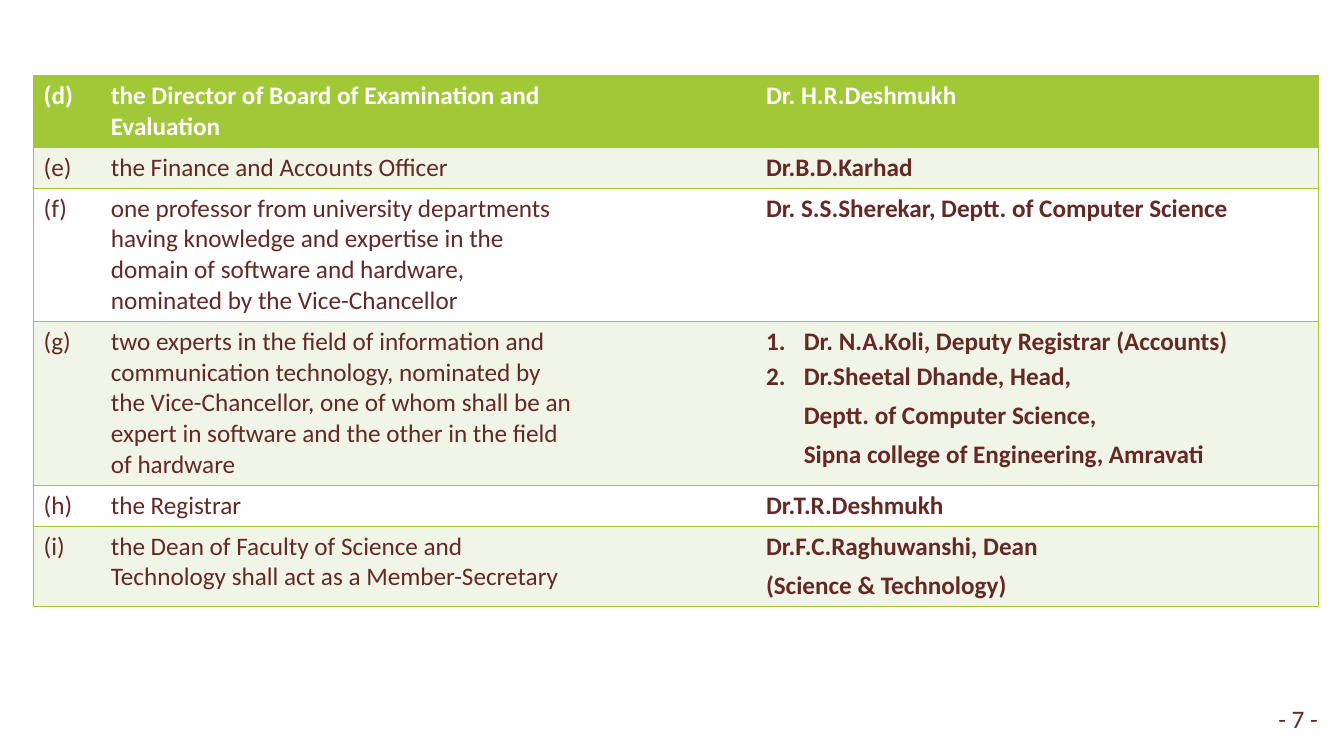
from dataclasses import dataclass

from pptx import Presentation
from pptx.dml.color import RGBColor as RGB
from pptx.enum.text import MSO_AUTO_SIZE as AUTO, PP_ALIGN as ALIGN
from pptx.oxml.ns import qn
from pptx.util import Emu, Pt
from lxml.etree import SubElement


@dataclass(frozen=True)
class Theme:
    font: str = "Calibri"
    size: int = 18
    gap: int = 3
    border: int = 1
    green: str = "A2C838"
    band: str = "F0F5E8"
    white: str = "FFFFFF"
    ink: str = "652825"


THEME = Theme()
COLS = [64, 464, 160, 536]
HANG = 36
ROWS = [
    (68, "(d)", "the Director of Board of Examination and Evaluation",
     [("Dr. H.R.Deshmukh", {})]),
    (39, "(e)", "the Finance and Accounts Officer",
     [("Dr.B.D.Karhad", {})]),
    (125, "(f)", "one professor from university departments having knowledge "
     "and expertise in the domain of software and hardware, nominated by the "
     "Vice-Chancellor",
     [("Dr. S.S.Sherekar, Deptt. of Computer Science",
       dict(align=ALIGN.JUSTIFY, left=HANG, indent=-HANG))]),
    (153, "(g)", "two experts in the field of information and communication "
     "technology, nominated by the Vice-Chancellor, one of whom shall be an "
     "expert in software and the other in the field of hardware",
     [("Dr. N.A.Koli, Deputy Registrar (Accounts)",
       dict(align=ALIGN.JUSTIFY, left=HANG, indent=-HANG, number=1)),
      ("Dr.Sheetal Dhande, Head,",
       dict(align=ALIGN.JUSTIFY, left=HANG, indent=-HANG, number=2,
            before=THEME.gap, after=THEME.gap)),
      ("Deptt. of Computer Science,",
       dict(align=ALIGN.JUSTIFY, left=HANG, before=THEME.gap, after=THEME.gap)),
      ("Sipna college of Engineering, Amravati",
       dict(align=ALIGN.JUSTIFY, left=HANG, before=THEME.gap, after=THEME.gap))]),
    (39, "(h)", "the Registrar",
     [("Dr.T.R.Deshmukh",
       dict(align=ALIGN.JUSTIFY, left=HANG, indent=-HANG))]),
    (74, "(i)", "the Dean of Faculty of Science and Technology shall act as a "
     "Member-Secretary",
     [("Dr.F.C.Raghuwanshi, Dean",
       dict(align=ALIGN.JUSTIFY, left=HANG, indent=-HANG, after=THEME.gap)),
      ("(Science & Technology)",
       dict(align=ALIGN.JUSTIFY, left=HANG, indent=-HANG,
            before=THEME.gap, after=THEME.gap))]),
]


def px(n):
    return Emu(n * 9525)


def put_text(tf, text, first=True, color=THEME.ink, bold=False, align=None,
             left=0, indent=0, number=None, before=0, after=0):
    p = tf.paragraphs[0] if first else tf.add_paragraph()
    if align is not None:
        p.alignment = align
    if before:
        p.space_before = Pt(before)
    if after:
        p.space_after = Pt(after)
    if left:
        props = p._p.get_or_add_pPr()
        props.set("marL", str(px(left)))
        props.set("indent", str(px(indent)))
        if number:
            SubElement(props, qn("a:buAutoNum"), type="arabicPeriod",
                       startAt=str(number))
    r = p.add_run()
    r.text = text
    r.font.name = THEME.font
    r.font.size = Pt(THEME.size)
    r.font.bold = bold
    r.font.color.rgb = RGB.from_string(color)


def style_cell(cell, fill, edges):
    props = cell._tc.get_or_add_tcPr()
    for edge in "LRTB":
        line = SubElement(props, qn(f"a:ln{edge}"), w=str(Pt(THEME.border)))
        if edge in edges:
            paint = SubElement(line, qn("a:solidFill"))
            SubElement(paint, qn("a:srgbClr"), val=THEME.green)
        else:
            SubElement(line, qn("a:noFill"))
    cell.fill.solid()
    cell.fill.fore_color.rgb = RGB.from_string(fill)


def add_members(s):
    height = sum(row[0] for row in ROWS)
    table = s.shapes.add_table(len(ROWS), len(COLS), px(32), px(72),
                               px(sum(COLS)), px(height)).table
    for column, width in zip(table.columns, COLS):
        column.width = px(width)
    for i, (row_height, letter, role, members) in enumerate(ROWS):
        table.rows[i].height = px(row_height)
        header = i == 0
        fill = THEME.green if header else THEME.band if i % 2 else THEME.white
        color = THEME.white if header else THEME.ink
        for j in range(len(COLS)):
            sides = {0: "L", len(COLS) - 1: "R"}.get(j, "")
            style_cell(table.cell(i, j), fill, "TB" + sides)
        put_text(table.cell(i, 0).text_frame, letter, color=color, bold=header)
        put_text(table.cell(i, 1).text_frame, role, color=color, bold=header)
        for k, (name, layout) in enumerate(members):
            put_text(table.cell(i, 3).text_frame, name, first=k == 0,
                     color=color, bold=True, **layout)


def add_page_number(s):
    tf = s.shapes.add_textbox(px(1208), px(665), px(64), px(38)).text_frame
    tf.word_wrap = True
    tf.auto_size = AUTO.SHAPE_TO_FIT_TEXT
    put_text(tf, "- 7 -")


def main():
    prs = Presentation()
    prs.slide_width, prs.slide_height = px(1280), px(720)
    s = prs.slides.add_slide(prs.slide_layouts[6])
    add_members(s)
    add_page_number(s)
    prs.save("out.pptx")


if __name__ == "__main__":
    main()
